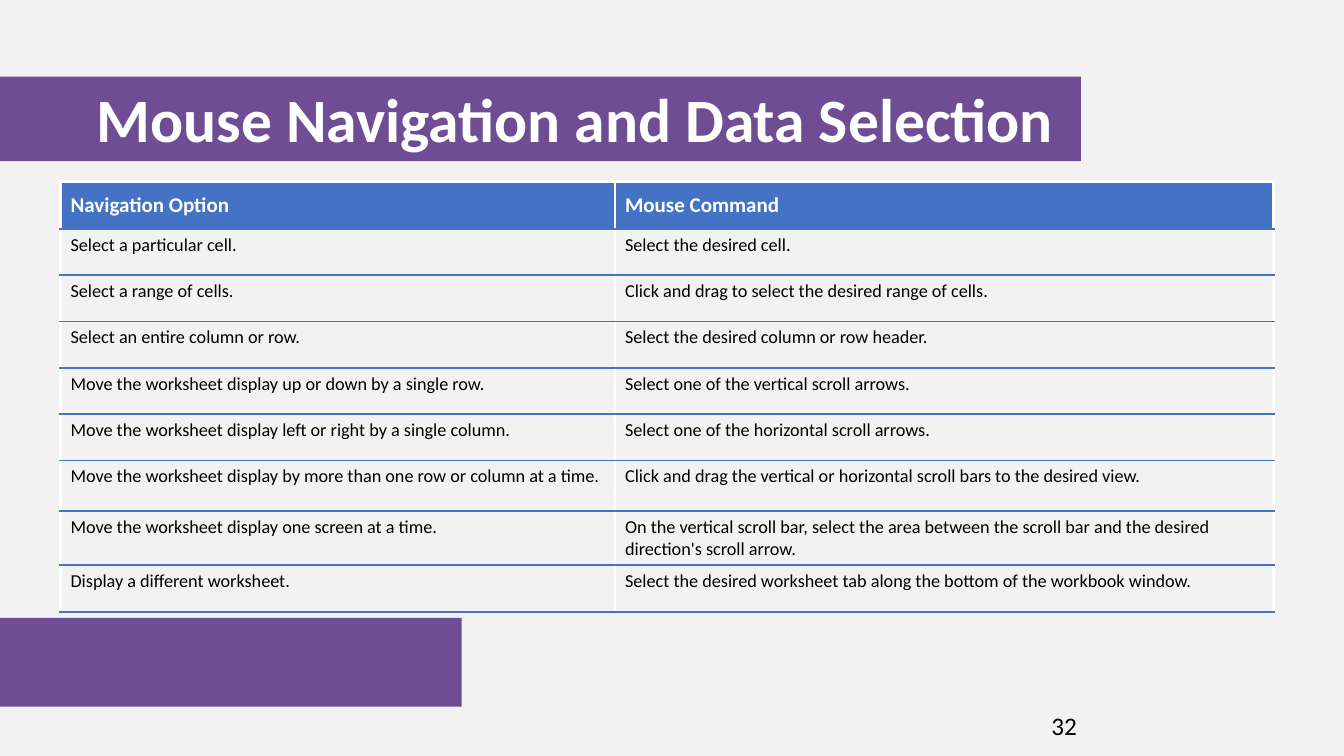
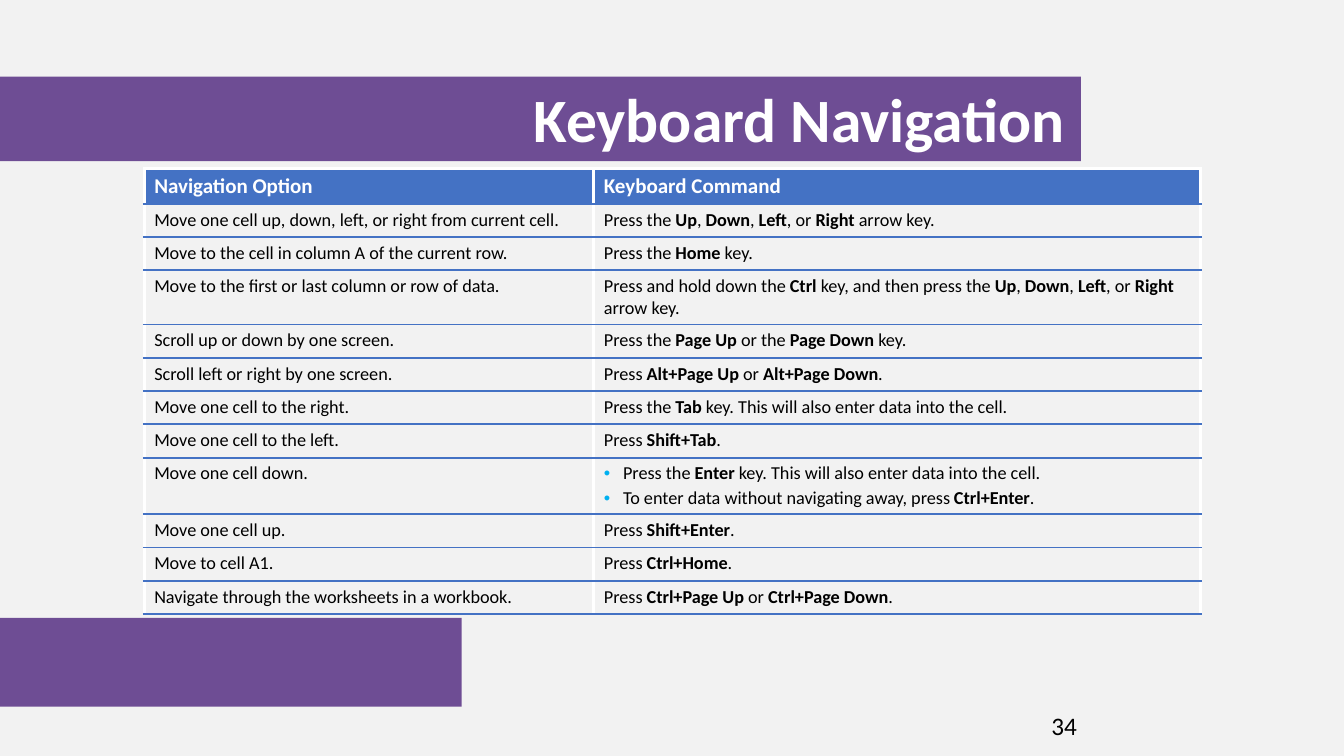
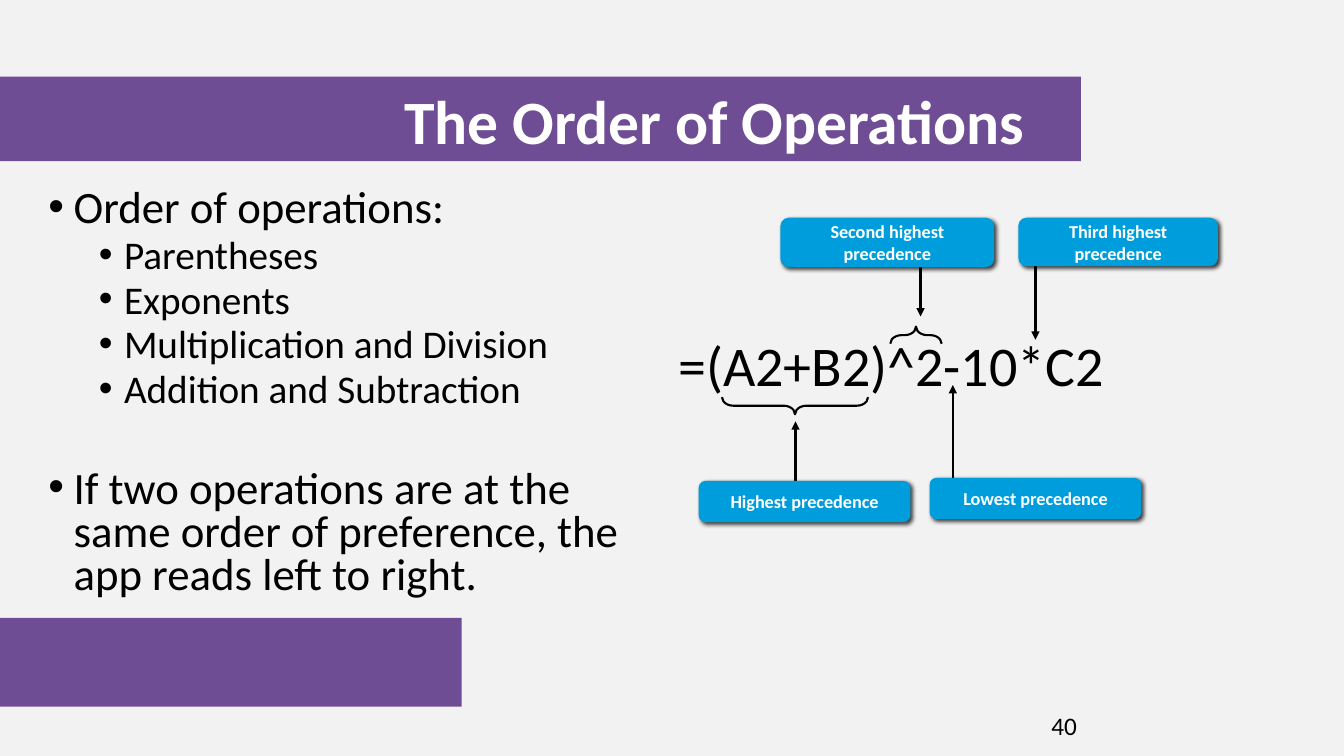
from lxml import etree
from pptx import Presentation
from pptx import util as u
from pptx.dml import color
from pptx.enum import shapes, text
from pptx.oxml import ns

PX = 9144  # 100 px to the inch
FONT = "Calibri"
COL = {"paper": "F2F2F2", "band": "6E4D94", "head": "4472C4", "call": "009DDC",
       "dot": "00B0F0", "white": "FFFFFF", "ink": "000000"}
BANDS = [(0, 613, 458, 88), (0, 76, 1072, 84)]

MOUSE = [
    ("Navigation Option", "Mouse Command"),
    ("Select a particular cell.", "Select the desired cell."),
    ("Select a range of cells.", "Click and drag to select the desired range of cells."),
    ("Select an entire column or row.", "Select the desired column or row header."),
    ("Move the worksheet display up or down by a single row.",
     "Select one of the vertical scroll arrows."),
    ("Move the worksheet display left or right by a single column.",
     "Select one of the horizontal scroll arrows."),
    ("Move the worksheet display by more than one row or column at a time.",
     "Click and drag the vertical or horizontal scroll bars to the desired view."),
    ("Move the worksheet display one screen at a time.",
     "On the vertical scroll bar, select the area between the scroll bar "
     "and the desired direction's scroll arrow."),
    ("Display a different worksheet.",
     "Select the desired worksheet tab along the bottom of the workbook window."),
]

# Asterisks enclose bold words; a list becomes bullets
KEYS = [
    ("Navigation Option", "Keyboard Command"),
    ("Move one cell up, down, left, or right from current cell.",
     "Press the *Up*, *Down*, *Left*, or *Right* arrow key."),
    ("Move to the cell in column A of the current row.", "Press the *Home* key."),
    ("Move to the first or last column or row of data.",
     "Press and hold down the *Ctrl* key, and then press the "
     "*Up*, *Down*, *Left*, or *Right* arrow key."),
    ("Scroll up or down by one screen.", "Press the *Page Up *or the *Page Down *key."),
    ("Scroll left or right by one screen.", "Press *Alt+Page Up *or *Alt+Page Down*."),
    ("Move one cell to the right.",
     "Press the *Tab* key. This will also enter data into the cell."),
    ("Move one cell to the left.", "Press *Shift+Tab*."),
    ("Move one cell down.",
     ["Press the *Enter* key. This will also enter data into the cell.",
      "To enter data without navigating away, press *Ctrl+Enter*."]),
    ("Move one cell up.", "Press *Shift+Enter*."),
    ("Move to cell A1.", "Press *Ctrl+Home*."),
    ("Navigate through the worksheets in a workbook.",
     "Press *Ctrl+Page Up *or *Ctrl+Page Down*."),
]

# Text, level, space before in points
RULES = [
    ("Order of operations:", 0, 0),
    ("Parentheses", 1, 5),
    ("Exponents", 1, 5),
    ("Multiplication and Division", 1, 5),
    ("Addition and Subtraction", 1, 5),
    ("If two operations are at the same order of preference, "
     "the app reads left to right.", 0, 42),
]

# Label, its box, arrow column, arrow start, arrow tip
CALLS = [
    ("Highest precedence", (693, 477, 210, 41), 789, 477, 418),
    ("Second highest precedence", (774, 216, 212, 49), 913, 265, 314),
    ("Third highest precedence", (1010, 216, 198, 48), 1027, 264, 337),
    ("Lowest precedence", (922, 474, 210, 41), 945, 474, 382),
]
BRACES = [((780, 330, 17, 145), 90), ((900, 307, 17, 51), 270)]


def rgb(name):
    return color.RGBColor.from_string(COL[name])


def px(*vals):
    return [u.Emu(v * PX) for v in vals]


def sub(node, tag, **attrs):
    return etree.SubElement(node, ns.qn(tag), attrs)


def paint(fill, name):
    fill.solid()
    fill.fore_color.rgb = rgb(name)


def style(para, size, name="ink", bold=False):
    for run in para.runs:
        font = run.font
        font.name, font.size, font.bold = FONT, u.Pt(size), bold
        font.color.rgb = rgb(name)


def place(shape, box):
    shape.left, shape.top, shape.width, shape.height = px(*box)


def bullet(para, left, hang, tint=None):
    props = para._p.get_or_add_pPr()
    props.set("marL", str(left * PX))
    props.set("indent", str(-hang * PX))
    if tint:
        sub(sub(props, "a:buClr"), "a:srgbClr", val=COL[tint])
    sub(props, "a:buFont", typeface="Arial")
    sub(props, "a:buChar", char="•")


# Shared parts
def block(slide, kind, box, name=None):
    shape = slide.shapes.add_shape(kind, *px(*box))
    shape.shadow.inherit = False
    if name:
        paint(shape.fill, name)
        shape.line.fill.background()
    else:
        shape.fill.background()
    return shape


def master(deck, slide):
    base = deck.slide_master
    paint(base.background.fill, "paper")
    for i, box in enumerate(BANDS):
        band = block(slide, shapes.MSO_SHAPE.RECTANGLE, box, "band").element
        band.nvSpPr.cNvPr.set("id", str(20 + i))
        base.shapes.element.insert(2 + i, band)


def label(slide, words, box, size):
    frame = slide.shapes.add_textbox(*px(*box)).text_frame
    frame.word_wrap = True
    frame.text = words
    style(frame.paragraphs[0], size)


def start(deck, layout, words, box, number):
    slide = deck.slides.add_slide(deck.slide_layouts[layout])
    title = slide.shapes.title
    place(title, box)
    frame = title.text_frame
    frame.text = words
    frame.auto_size = text.MSO_AUTO_SIZE.NONE
    frame.vertical_anchor = text.MSO_ANCHOR.TOP
    para = frame.paragraphs[0]
    para.alignment = text.PP_ALIGN.RIGHT
    para.line_spacing = 0.9
    style(para, 44, "white", True)
    label(slide, number, (1033, 700, 241, 40), 18)
    return slide


# Tables
def edges(cell, top):
    props = cell._tc.get_or_add_tcPr()
    for side, name in zip("LRTB", ("white", "white", top, "head")):
        width = 2.25 if name == "white" else 1.5
        line = sub(props, f"a:ln{side}", w=str(u.Pt(width)))
        sub(sub(line, "a:solidFill"), "a:srgbClr", val=COL[name])


def write(cell, words, head):
    items = words if isinstance(words, list) else [words]
    frame = cell.text_frame
    for i, item in enumerate(items):
        para = frame.add_paragraph() if i else frame.paragraphs[0]
        if len(items) > 1:
            bullet(para, 19, 19, "dot")
        if i:
            para.space_before = u.Pt(2)
        for part in item.split("*"):
            para.add_run().text = part
        if head:
            style(para, 15, "white", True)
        else:
            style(para, 13)
            for run in para.runs[1::2]:
                run.font.bold = True


def grid(slide, data, spot, cols, rows):
    frame = slide.shapes.add_table(len(data), len(cols),
                                   *px(*spot, sum(cols), sum(rows)))
    table = frame.table
    table.horz_banding = False
    for col, wide in zip(table.columns, cols):
        col.width = u.Emu(wide * PX)
    for r, (row, high) in enumerate(zip(table.rows, rows)):
        row.height = u.Emu(high * PX)
        for cell, words in zip(row.cells, data[r]):
            head = r == 0
            edges(cell, "white" if head else "head")
            paint(cell.fill, "head" if head else "paper")
            if head:
                cell.vertical_anchor = text.MSO_ANCHOR.MIDDLE
            write(cell, words, head)


# List and formula diagram
def outline(slide):
    body = slide.placeholders[1]
    place(body, (38, 183, 625, 450))
    frame = body.text_frame
    frame.auto_size = text.MSO_AUTO_SIZE.NONE
    for i, (words, level, gap) in enumerate(RULES):
        para = frame.add_paragraph() if i else frame.paragraphs[0]
        para.text = words
        para.level = level
        para.line_spacing = 0.8
        para.space_before = u.Pt(gap)
        bullet(para, 25 + 50 * level, 25)
        style(para, 32 - 4 * level)


def arrow(slide, x, tail, tip):
    line = slide.shapes.add_connector(shapes.MSO_CONNECTOR.STRAIGHT,
                                      *px(x, tail, x, tip))
    line.line.color.rgb = rgb("ink")
    line.line.width = u.Pt(1.5)
    props = line.element.spPr
    sub(props.find(ns.qn("a:ln")), "a:tailEnd", type="triangle")
    sub(props, "a:effectLst")


def callout(slide, words, box):
    shape = block(slide, shapes.MSO_SHAPE.ROUNDED_RECTANGLE, box, "call")
    glow = shape.element.spPr.find(ns.qn("a:effectLst"))
    cast = sub(glow, "a:outerShdw", blurRad=str(u.Pt(3)), dist=str(u.Pt(2)),
               dir="2700000", algn="tl", rotWithShape="0")
    sub(sub(cast, "a:srgbClr", val=COL["ink"]), "a:alpha", val="75000")
    frame = shape.text_frame
    frame.word_wrap = True
    frame.vertical_anchor = text.MSO_ANCHOR.MIDDLE
    frame.text = words
    frame.paragraphs[0].alignment = text.PP_ALIGN.CENTER
    style(frame.paragraphs[0], 13, "white", True)


def brace(slide, box, turn):
    shape = block(slide, shapes.MSO_SHAPE.RIGHT_BRACE, box)
    shape.rotation = turn
    shape.adjustments[0] = 0.66
    shape.line.color.rgb = rgb("ink")
    shape.line.width = u.Pt(1.5)


def main():
    deck = Presentation()
    deck.slide_width, deck.slide_height = px(1333, 750)

    # Mouse commands
    slide = start(deck, 5, "Mouse Navigation and Data Selection",
                  (15, 84, 1041, 70), "32")
    master(deck, slide)
    grid(slide, MOUSE, (60, 180), (550, 653), [47] + [46] * 5 + [50, 54, 46])

    # Keyboard commands
    slide = start(deck, 5, "Keyboard Navigation", (19, 84, 1048, 61), "34")
    grid(slide, KEYS, (143, 167), (446, 602),
         [34, 33, 33, 54] + [33] * 4 + [56] + [33] * 3)

    # Order of operations
    slide = start(deck, 1, "The Order of Operations", (38, 86, 989, 67), "40")
    outline(slide)
    for words, box, x, tail, tip in CALLS:
        arrow(slide, x, tail, tip)
        callout(slide, words, box)
    label(slide, "=(A2+B2)^2-10*C2", (663, 323, 599, 92), 40)
    for box, turn in BRACES:
        brace(slide, box, turn)

    deck.save("out.pptx")


if __name__ == "__main__":
    main()
